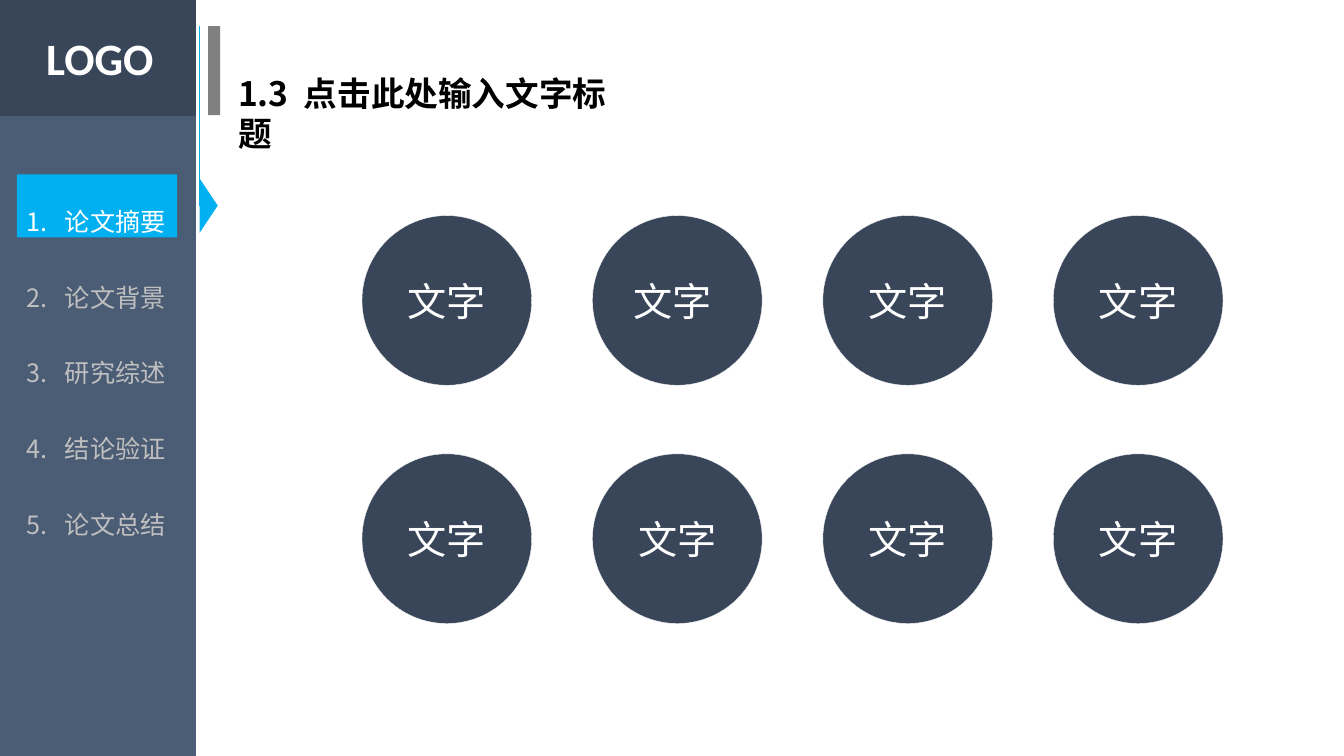
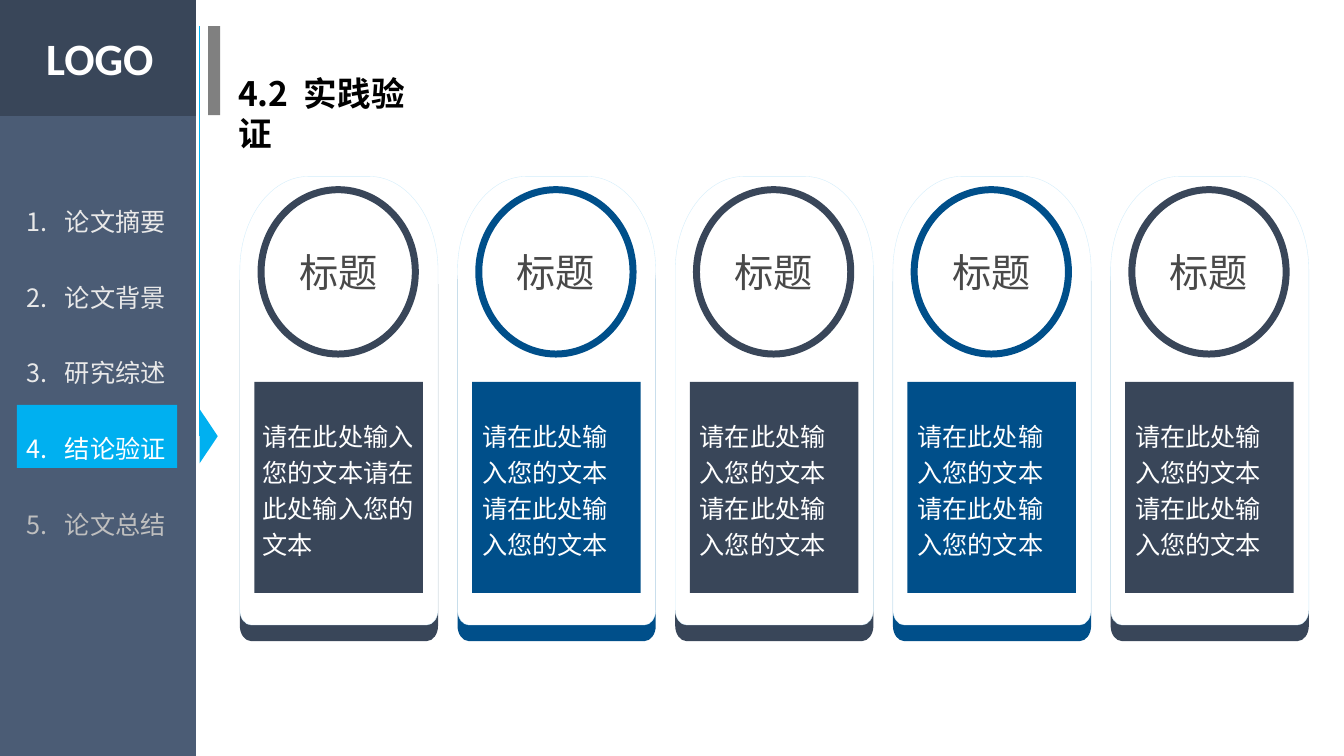
from lxml import etree
from pptx import Presentation
from pptx.dml.color import RGBColor
from pptx.enum import dml, shapes, text
from pptx.oxml.ns import qn
from pptx.util import Pt

NAVY, SLATE, BLUE, CYAN = "394659", "4B5C75", "004F8A", "00B0F0"
WHITE, BLACK, GREY, DIM, LIGHT = "FFFFFF", "000000", "808080", "BFBFBF", "E9E9E9"
CJK = "Noto Sans CJK SC"
MSO = shapes.MSO_SHAPE
rgb = RGBColor.from_string


def style(sp, fill, line=None, width=0.25):
    sp.shadow.inherit = False
    sp.fill.solid()
    sp.fill.fore_color.rgb = rgb(fill)
    if line:
        sp.line.color.rgb = rgb(line)
        sp.line.width = Pt(width)
    else:
        sp.line.fill.background()
    return sp


def write(sp, paragraphs, size, color, font=CJK, bold=False, wrap=True,
          align=text.PP_ALIGN.LEFT, spacing=None):
    tf = sp.text_frame
    tf.word_wrap = wrap
    for i, runs in enumerate(paragraphs):
        p = tf.add_paragraph() if i else tf.paragraphs[0]
        p.alignment = align
        p.line_spacing = spacing
        for content in runs:
            r = p.add_run()
            r.text = content
            r.font.size = Pt(size)
            r.font.bold = bold
            r.font.name = font
            r.font.color.rgb = rgb(color)
            etree.SubElement(r.font._element, qn("a:ea"), typeface=font)
    return tf


prs = Presentation()
prs.slide_width, prs.slide_height = Pt(960), Pt(540)
blank = prs.slide_layouts[6]

nav = ["论文摘要", "论文背景", "研究综述", "结论验证", "论文总结"]
pages = [("1.3", "点击此处输入文字标题", 301, 0), ("4.2", "实践验证", 155.5, 3)]
slides = []

for number, title, title_w, active in pages:
    s = prs.slides.add_slide(blank)
    if not slides:
        for y, h, color in [(83, 457, SLATE), (0, 82.8, NAVY)]:
            sp = style(s.shapes.add_shape(MSO.RECTANGLE, 0, Pt(y), Pt(140), Pt(h)), color)
            blank.element.cSld.spTree.append(sp._element)
    slides.append(s)

    mark_y = 124.6 + 54.9 * active
    style(s.shapes.add_shape(MSO.RECTANGLE, Pt(12), Pt(mark_y), Pt(114.5), Pt(45)), CYAN)
    sp = s.shapes.add_shape(MSO.ISOSCELES_TRIANGLE, Pt(129.6), Pt(mark_y + 15.8), Pt(38.9), Pt(13))
    style(sp, CYAN).rotation = 90

    sp = s.shapes.add_textbox(Pt(25.9), Pt(18.7), Pt(92.2), Pt(46.1))
    write(sp, [["LOGO"]], 32, WHITE, "Calibri", bold=True, wrap=False)

    sp = s.shapes.add_textbox(Pt(12.2), Pt(111.6), Pt(114.5), Pt(280))
    tf = write(sp, [[item] for item in nav], 18, WHITE, wrap=False, spacing=2.5)
    for i, p in enumerate(tf.paragraphs):
        pPr = p._p.get_or_add_pPr()
        pPr.set("marL", str(Pt(27)))
        pPr.set("indent", str(-Pt(27)))
        etree.SubElement(pPr, qn("a:buFont"), typeface=CJK)
        etree.SubElement(pPr, qn("a:buAutoNum"), type="arabicPeriod")
        color = LIGHT if i < active else WHITE if i == active else DIM
        p.runs[0].font.color.rgb = rgb(color)

    c = s.shapes.add_connector(shapes.MSO_CONNECTOR.STRAIGHT,
                               Pt(142.6), Pt(mark_y + 22.3), Pt(142.6), Pt(18.7))
    c.line.color.rgb = rgb(CYAN)
    c.line.width = Pt(0.5)
    etree.SubElement(c._element.spPr, qn("a:effectLst"))
    style(s.shapes.add_shape(MSO.RECTANGLE, Pt(148.6), Pt(18.7), Pt(8.6), Pt(63.6)), GREY)

    sp = s.shapes.add_textbox(Pt(163), Pt(48.6), Pt(title_w), Pt(36))
    tf = write(sp, [[number, " ", title]], 24, BLACK, bold=True)
    tf.paragraphs[0].runs[1].font._element.set("spc", "540")

for row in range(2):
    for col in range(4):
        sp = slides[0].shapes.add_shape(MSO.FLOWCHART_CONNECTOR, Pt(258.6 + 164.6 * col),
                                        Pt(154 + 170.2 * row), Pt(121.2), Pt(121.2))
        style(sp, NAVY, WHITE).line.dash_style = dml.MSO_LINE.SQUARE_DOT
        label = "文字 " if (row, col) == (0, 1) else "文字"
        tf = write(sp, [[label]], 28, WHITE, align=text.PP_ALIGN.CENTER)
        tf.vertical_anchor = text.MSO_ANCHOR.MIDDLE

w, h = 141.6, 320.4
outline = [(49, 0), (w - 49, 0), (w, 67), (w, h - 11),
           (w - 8, h), (8, h), (0, h - 11), (0, 67), (49, 0)]
corners = {2: (w, 0), 4: (w, h), 6: (0, h), 8: (0, 0)}

prompt = "请在此处输入您的文本"
s = slides[1]
for i in range(5):
    x = 171.3 + 155.5 * i
    color = BLUE if i % 2 else NAVY
    for y, fill, line in [(137.5, color, None), (126, WHITE, "D1EDFB")]:
        points = [(Pt(x + px), Pt(y + py)) for px, py in outline]
        fb = s.shapes.build_freeform(*points[0])
        fb.add_line_segments(points[1:])
        sp = style(fb.convert_to_shape(), fill, line)
        segments = list(next(sp._element.iter(qn("a:path"))))
        for n, corner in corners.items():
            curve = etree.Element(qn("a:cubicBezTo"))
            for end in (outline[n - 1], outline[n]):
                cx, cy = [e + 0.55 * (k - e) for e, k in zip(end, corner)]
                etree.SubElement(curve, qn("a:pt"), x=str(Pt(cx)), y=str(Pt(cy)))
            curve.append(segments[n][0])
            segments[n].getparent().replace(segments[n], curve)

    sp = s.shapes.add_shape(MSO.OVAL, Pt(x + 15.2), Pt(135.5), Pt(110.2), Pt(117.4))
    tf = write(style(sp, WHITE, color, 5), [["标题"]], 28, "494949", align=text.PP_ALIGN.CENTER)
    tf.vertical_anchor = text.MSO_ANCHOR.MIDDLE
    tf.margin_left = tf.margin_right = tf.margin_top = tf.margin_bottom = 0

    sp = s.shapes.add_shape(MSO.RECTANGLE, Pt(x + 10.4), Pt(272.8), Pt(120.4), Pt(150.8))
    body = [[prompt], [prompt]] if i else [[prompt * 2]]
    tf = write(style(sp, color), body, 18, WHITE, spacing=1.2)
    tf.vertical_anchor = text.MSO_ANCHOR.MIDDLE
    if i == 0:
        tf.margin_left = tf.margin_right = tf.margin_top = tf.margin_bottom = Pt(5.8)

prs.save("out.pptx")
